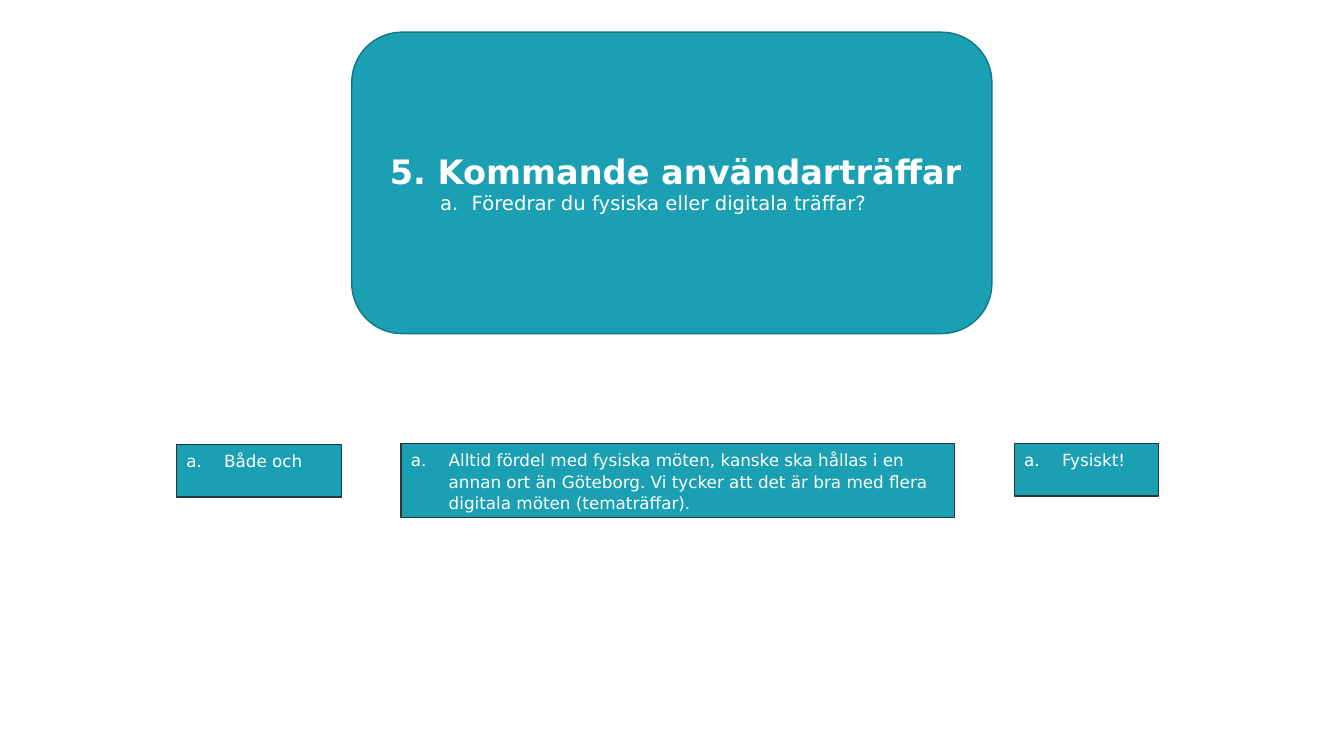
import lxml.etree
import pptx
import pptx.dml.color
import pptx.enum.shapes
import pptx.enum.text
import pptx.oxml.ns
import pptx.util

Pt = pptx.util.Pt
SHAPES = pptx.enum.shapes.MSO_SHAPE
ANCHORS = pptx.enum.text.MSO_ANCHOR
COLOURS = {
    "teal": "1A9FB3",
    "dark teal": "137684",
    "charcoal": "29353A",
    "white": "FFFFFF",
}


def colour(name):
    return pptx.dml.color.RGBColor.from_string(COLOURS[name])


def write(paragraph, text, size=12, bold=False, margin=0, hanging=0, spacing=1.0, after=0):
    paragraph.alignment = pptx.enum.text.PP_ALIGN.LEFT
    paragraph.line_spacing = spacing
    paragraph.space_after = Pt(after)
    run = paragraph.add_run()
    run.text = text
    run.font.name = "DejaVu Sans"
    run.font.size = Pt(size)
    run.font.bold = bold
    run.font.color.rgb = colour("white")
    if hanging:
        properties = paragraph._p.get_or_add_pPr()
        properties.set("marL", str(Pt(margin)))
        properties.set("indent", str(-Pt(hanging)))
        bullet_font = lxml.etree.SubElement(properties, pptx.oxml.ns.qn("a:buFont"))
        bullet_font.set("typeface", "+mj-lt")
        bullet = lxml.etree.SubElement(properties, pptx.oxml.ns.qn("a:buAutoNum"))
        bullet.set("type", "alphaLcPeriod")


presentation = pptx.Presentation()
presentation.slide_width = Pt(960)
presentation.slide_height = Pt(540)
slide = presentation.slides.add_slide(presentation.slide_layouts[6])

boxes = [
    (SHAPES.ROUNDED_RECTANGLE, 251.3, 23, 457.2, 215.3, "dark teal", "", 0),
    (SHAPES.RECTANGLE, 126, 317.5, 118, 37.6, "charcoal", "Både och", 0),
    (SHAPES.RECTANGLE, 286.4, 317, 395.3, 52.5, "charcoal",
     "Alltid fördel med fysiska möten, kanske ska hållas i en annan ort än Göteborg. "
     "Vi tycker att det är bra med flera digitala möten (tematräffar).", 8),
    (SHAPES.RECTANGLE, 724.5, 317, 103, 37.4, "charcoal", "Fysiskt!", 0),
]
for kind, left, top, width, height, outline, answer, after in boxes:
    shape = slide.shapes.add_shape(kind, Pt(left), Pt(top), Pt(width), Pt(height))
    shape.shadow.inherit = False
    shape.fill.solid()
    shape.fill.fore_color.rgb = colour("teal")
    shape.line.color.rgb = colour(outline)
    shape.line.width = Pt(1)
    if answer:
        shape.text_frame.word_wrap = True
        shape.text_frame.vertical_anchor = ANCHORS.TOP
        write(shape.text_frame.paragraphs[0], answer,
              margin=27, hanging=27, spacing=1.07, after=after)

heading = slide.shapes.add_textbox(Pt(271.4), Pt(103.7), Pt(491.8), Pt(53.3))
heading.text_frame.word_wrap = True
heading.text_frame.vertical_anchor = ANCHORS.MIDDLE
write(heading.text_frame.paragraphs[0], "5. Kommande användarträffar", size=24, bold=True)
write(heading.text_frame.add_paragraph(), "Föredrar du fysiska eller digitala träffar?",
      size=14, margin=58.5, hanging=22.5)

presentation.save("out.pptx")
